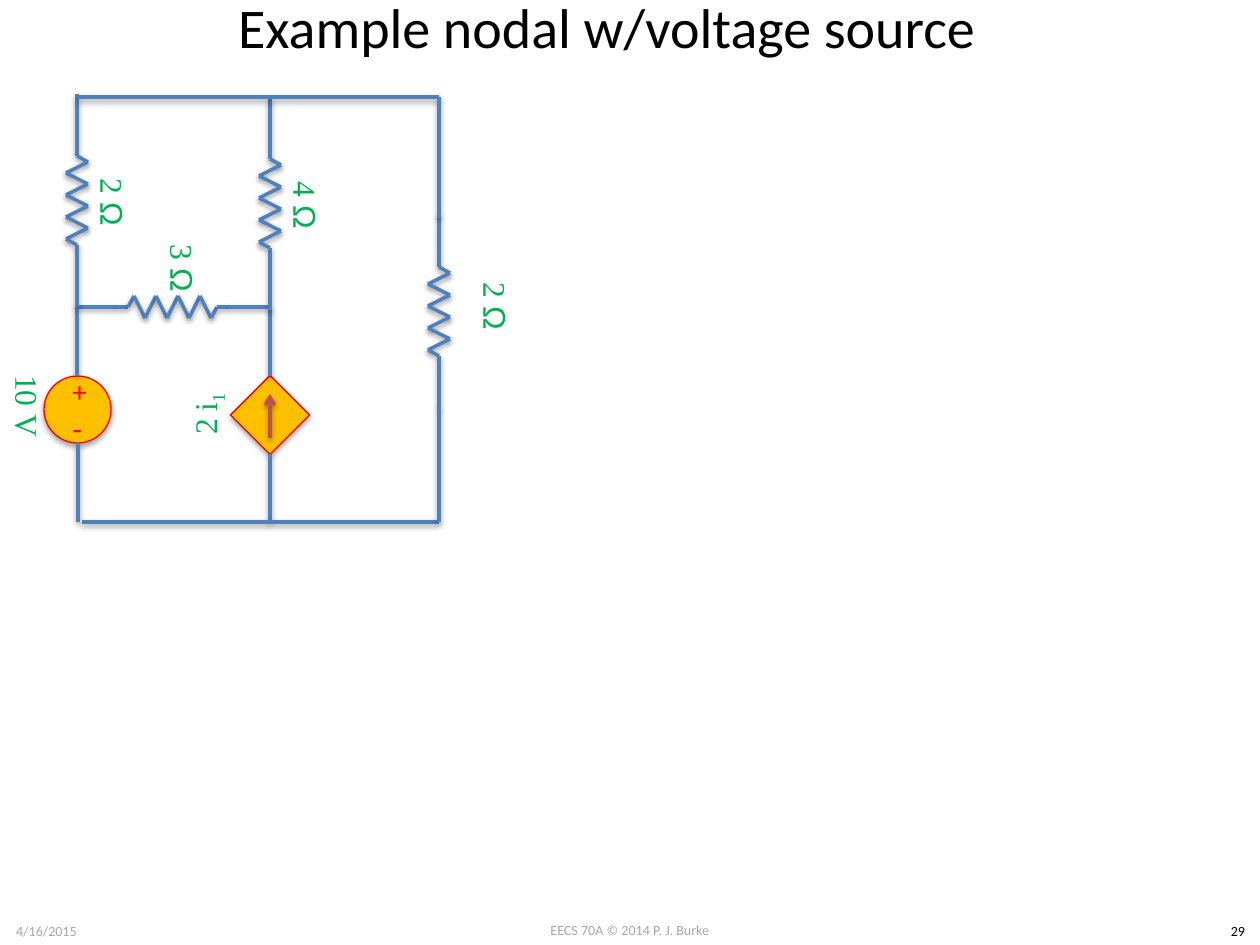
from lxml.etree import SubElement
from pptx import Presentation
from pptx.dml.color import RGBColor
from pptx.enum.shapes import MSO_CONNECTOR as Connector, MSO_SHAPE as Shape
from pptx.enum.text import MSO_ANCHOR as Anchor, PP_ALIGN as Align
from pptx.oxml.ns import qn
from pptx.util import Emu, Pt

WIRE = "4F81BD"
ARROW = "C0504D"
GREEN = "00B050"
RED = "FF0000"
AMBER = "FFC000"
GREY = "A6A6A6"
BLACK = "000000"
SERIF = "Times New Roman"
OHM = ("Ω", "Arial", 0)


def px(length):
    """Turn pixels, 126 to the inch, into EMU."""
    return Emu(round(length * 914400 / 126))


def colour(value):
    """Turn a hex string into a colour."""
    return RGBColor.from_string(value)


def add_shadow(shape, distance, alpha):
    """Give a shape or connector a soft shadow below it."""
    properties = shape._element.spPr
    effects = properties.find(qn("a:effectLst"))
    if effects is None:
        effects = SubElement(properties, qn("a:effectLst"))
    shadow = SubElement(effects, qn("a:outerShdw"), blurRad="40000",
                        dist=str(distance), dir="5400000", rotWithShape="0")
    tint = SubElement(shadow, qn("a:srgbClr"), val=BLACK)
    SubElement(tint, qn("a:alpha"), val=str(alpha * 1000))


def add_wire(shapes, start, end, line_colour=WIRE):
    """Draw a straight wire between two points."""
    wire = shapes.add_connector(Connector.STRAIGHT, *map(px, (*start, *end)))
    wire.line.color.rgb = colour(line_colour)
    wire.line.width = Pt(2)
    add_shadow(wire, 20000, 38)
    return wire


def add_arrow(shapes, start, end):
    """Draw a current arrow pointing at its end."""
    arrow = add_wire(shapes, start, end, ARROW)
    SubElement(arrow.line._get_or_add_ln(), qn("a:tailEnd"), type="arrow")


def add_resistor(shapes, left, top, leads, horizontal=False):
    """Draw a zigzag of 89 px with the same chain of leads at both ends."""
    points = [(0, 0)]
    points += [(6 + 11 * k, 11 if k % 2 == 0 else -11) for k in range(8)]
    points.append((89, 0))
    reach = 0
    for lead in leads:
        reach += lead
        points = [(-reach, 0), *points, (89 + reach, 0)]
    if horizontal:
        places = [(left + along, top - across) for along, across in points]
    else:
        places = [(left + across, top + along) for along, across in points]
    group = shapes.add_group_shape()
    for start, end in zip(places, places[1:]):
        add_wire(group.shapes, start, end)


def add_source(shapes, kind, box, rotation=0):
    """Draw the amber outline of a source."""
    source = shapes.add_shape(kind, *map(px, box))
    source.rotation = rotation
    source.fill.solid()
    source.fill.fore_color.rgb = colour(AMBER)
    source.line.color.rgb = colour(RED)
    source.line.width = Pt(0.75)
    source.shadow.inherit = False
    add_shadow(source, 23000, 35)
    return source


def format_paragraph(paragraph, size, font_colour, name=None):
    """Centre a paragraph and set its font."""
    paragraph.alignment = Align.CENTER
    paragraph.font.size = Pt(size)
    paragraph.font.color.rgb = colour(font_colour)
    if name:
        paragraph.font.name = name


def add_text(shapes, box, text, size, font_colour, name="Calibri", anchor=Anchor.MIDDLE):
    """Add a centred one-line text box."""
    text_box = shapes.add_textbox(*map(px, box))
    frame = text_box.text_frame
    frame.word_wrap = True
    frame.vertical_anchor = anchor
    paragraph = frame.paragraphs[0]
    paragraph.text = text
    format_paragraph(paragraph, size, font_colour, name)
    return text_box


def add_label(shapes, left, top, runs, rotation=90):
    """Add a turned green label made of (text, font, baseline) runs."""
    label = add_text(shapes, (left, top, 150, 92), "", 18, GREEN, None)
    label.rotation = rotation
    for text, name, baseline in runs:
        run = label.text_frame.paragraphs[0].add_run()
        run.text = text
        run.font.name = name
        if baseline:
            run._r.get_or_add_rPr().set("baseline", str(baseline * 1000))


def add_title(slide, text):
    """Place and format the title."""
    title = slide.shapes.title
    title.left, title.top, title.width, title.height = map(px, (40, -38, 1134, 129))
    title.text_frame.text = text
    title.text_frame.vertical_anchor = Anchor.MIDDLE
    format_paragraph(title.text_frame.paragraphs[0], 32, BLACK, "Calibri")


def add_voltage_source(shapes):
    """Draw the round voltage source with its signs and wires."""
    group = shapes.add_group_shape().shapes
    add_source(group, Shape.OVAL, (44, 376, 67, 67))
    add_text(group, (60, 370, 33, 42), "+", 16.6, RED)
    add_text(group, (60, 407, 33, 42), "-", 18, RED)
    add_wire(group, (78, 522), (78, 443))
    add_wire(group, (77, 376), (77, 308))


def add_current_source(shapes):
    """Draw the dependent current source with its arrow and wires."""
    group = shapes.add_group_shape().shapes
    add_source(group, Shape.RECTANGLE, (242, 387, 56, 56), 45)
    add_wire(group, (270, 376), (270, 308))
    add_wire(group, (270, 522), (270, 454))
    add_arrow(group, (270, 438), (270, 394))


def main():
    """Build the circuit slide."""
    presentation = Presentation()
    presentation.slide_width, presentation.slide_height = px(1260), px(945)
    slide = presentation.slides.add_slide(presentation.slide_layouts[5])
    shapes = slide.shapes

    add_title(slide, "Example nodal w/voltage source")
    for box, text, font_colour in (
        ((483, 915, 294, 30), "EECS 70A © 2014 P. J. Burke", GREY),
        ((0, 916, 93, 30), "4/16/2015", GREY),
        ((1216, 916, 44, 30), "29", BLACK),
    ):
        add_text(shapes, box, text, 8, font_colour, anchor=Anchor.TOP)

    add_resistor(shapes, 439, 267, (11, 42))
    add_resistor(shapes, 128, 307, (11, 42), horizontal=True)
    add_voltage_source(shapes)
    add_resistor(shapes, 77, 156, (62,))
    add_current_source(shapes)
    add_resistor(shapes, 270, 159, (62,))
    for start, end in (
        ((82, 522), (439, 522)),
        ((78, 97), (439, 97)),
        ((439, 218), (439, 97)),
        ((439, 407), (439, 522)),
    ):
        add_wire(shapes, start, end)

    for left, top, value in ((421, 260, "2 "), (108, 222, "3 "),
                             (38, 156, "2 "), (231, 159, "4 ")):
        add_label(shapes, left, top, ((value, SERIF, 0), OHM))
    add_label(shapes, 132, 368, (("2 i", SERIF, 0), ("1", SERIF, -25)), 270)
    add_label(shapes, -47, 360, (("10 V", SERIF, 0),))

    presentation.save("out.pptx")


if __name__ == "__main__":
    main()
